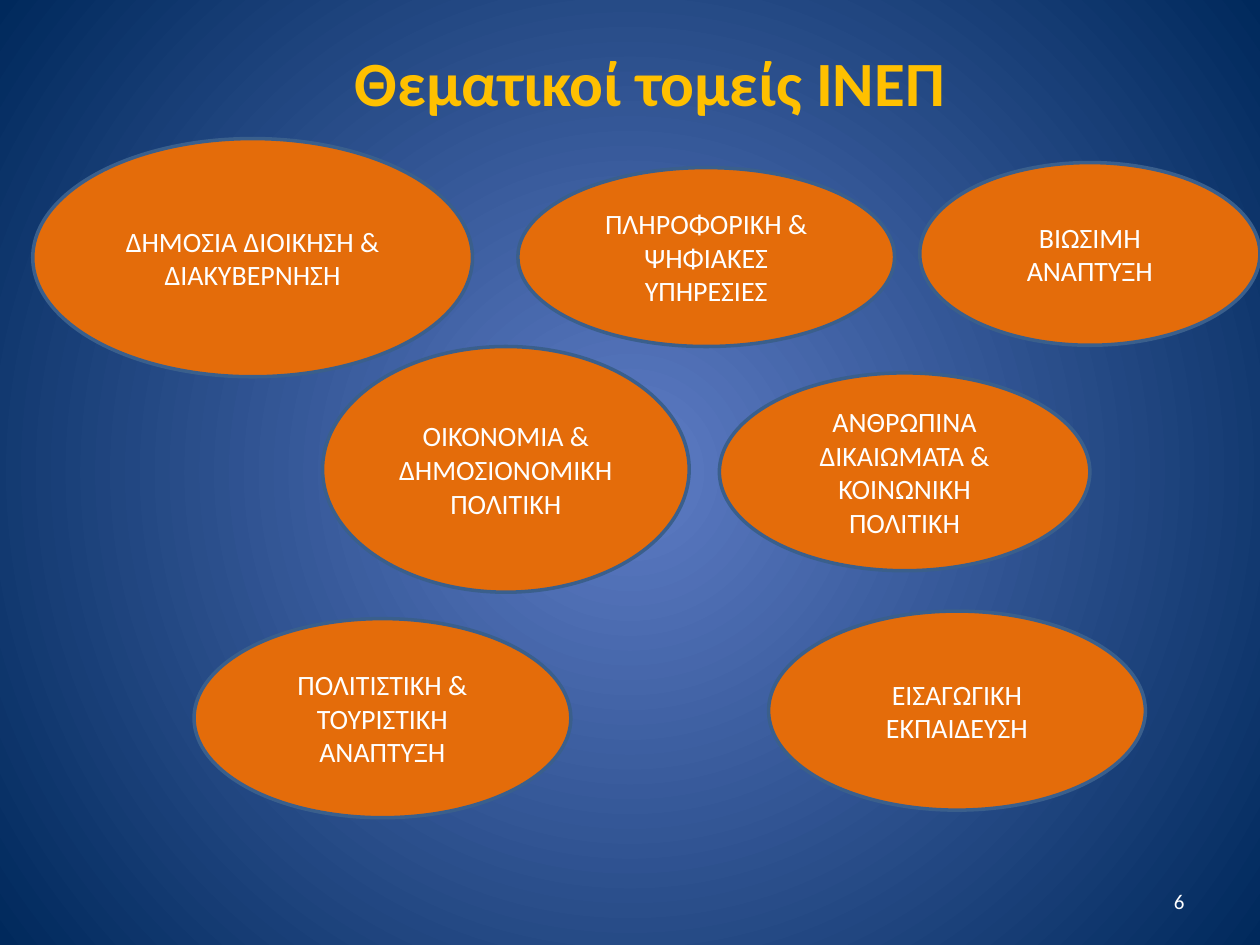
from lxml.etree import SubElement
from pptx import Presentation
from pptx.dml.color import RGBColor
from pptx.enum.shapes import MSO_SHAPE
from pptx.enum.text import MSO_ANCHOR, PP_ALIGN
from pptx.oxml.ns import qn
from pptx.util import Inches, Pt

FONT = "Calibri"
WHITE, GOLD, ORANGE, OUTLINE = "FFFFFF", "FFC000", "E46C0A", "3A5F8C"
BACKGROUND = ["5E7CC5", "00295C"]

TITLE = "Θεματικοί τομείς ΙΝΕΠ"
PAGE_NUMBER = "6"
TOPICS = [
    ("ΔΗΜΟΣΙΑ ΔΙΟΙΚΗΣΗ & ΔΙΑΚΥΒΕΡΝΗΣΗ", (0.26, 1.1, 3.49, 1.89)),
    ("ΠΛΗΡΟΦΟΡΙΚΗ & ΨΗΦΙΑΚΕΣ ΥΠΗΡΕΣΙΕΣ", (4.11, 1.33, 2.99, 1.42)),
    ("ΒΙΩΣΙΜΗ ΑΝΑΠΤΥΞΗ", (7.3, 1.29, 2.7, 1.45)),
    ("ΟΙΚΟΝΟΜΙΑ & ΔΗΜΟΣΙΟΝΟΜΙΚΗ ΠΟΛΙΤΙΚΗ", (2.56, 2.75, 2.91, 1.95)),
    ("ΑΝΘΡΩΠΙΝΑ ΔΙΚΑΙΩΜΑΤΑ & ΚΟΙΝΩΝΙΚΗ ΠΟΛΙΤΙΚΗ", (5.71, 2.96, 2.94, 1.57)),
    ("ΠΟΛΙΤΙΣΤΙΚΗ & ΤΟΥΡΙΣΤΙΚΗ ΑΝΑΠΤΥΞΗ", (1.54, 4.91, 2.99, 1.58)),
    ("ΕΙΣΑΓΩΓΙΚΗ ΕΚΠΑΙΔΕΥΣΗ", (6.1, 4.85, 2.99, 1.58)),
]


def color(value):
    return RGBColor.from_string(value)


def write(shape, text, size, ink=WHITE, align=PP_ALIGN.CENTER, bold=False):
    frame = shape.text_frame
    frame.word_wrap = True
    frame.vertical_anchor = MSO_ANCHOR.MIDDLE
    para = frame.paragraphs[0]
    para.alignment = align
    span = para.add_run()
    span.text = text
    span.font.name = FONT
    span.font.size = Pt(size)
    span.font.bold = bold
    span.font.color.rgb = color(ink)


def add_label(page, area, text, size, **style):
    box = page.shapes.add_textbox(*map(Inches, area))
    write(box, text, size, **style)


def add_topic(page, text, area):
    ellipse = page.shapes.add_shape(MSO_SHAPE.OVAL, *map(Inches, area))
    ellipse.shadow.inherit = False
    ellipse.fill.solid()
    ellipse.fill.fore_color.rgb = color(ORANGE)
    ellipse.line.color.rgb = color(OUTLINE)
    ellipse.line.width = Pt(2)
    write(ellipse, text, 16)


def paint_background(page):
    fill = page.background.fill
    fill.gradient()
    for stop, value in zip(fill.gradient_stops, BACKGROUND):
        stop.color.rgb = color(value)
    gradient = page.element.find(".//" + qn("a:gradFill"))
    gradient.remove(gradient.find(qn("a:lin")))
    radial = SubElement(gradient, qn("a:path"), path="circle")
    SubElement(radial, qn("a:fillToRect"), l="50000", t="50000", r="50000", b="50000")


def main():
    deck = Presentation()
    deck.slide_width, deck.slide_height = Inches(10), Inches(7.5)
    page = deck.slides.add_slide(deck.slide_layouts[6])
    paint_background(page)
    add_label(page, (0.73, 0.29, 8.86, 0.71), TITLE, 36, ink=GOLD, bold=True)
    add_label(page, (7.17, 6.95, 2.33, 0.4), PAGE_NUMBER, 12, align=PP_ALIGN.RIGHT)
    for text, area in TOPICS:
        add_topic(page, text, area)
    deck.save("out.pptx")


if __name__ == "__main__":
    main()
